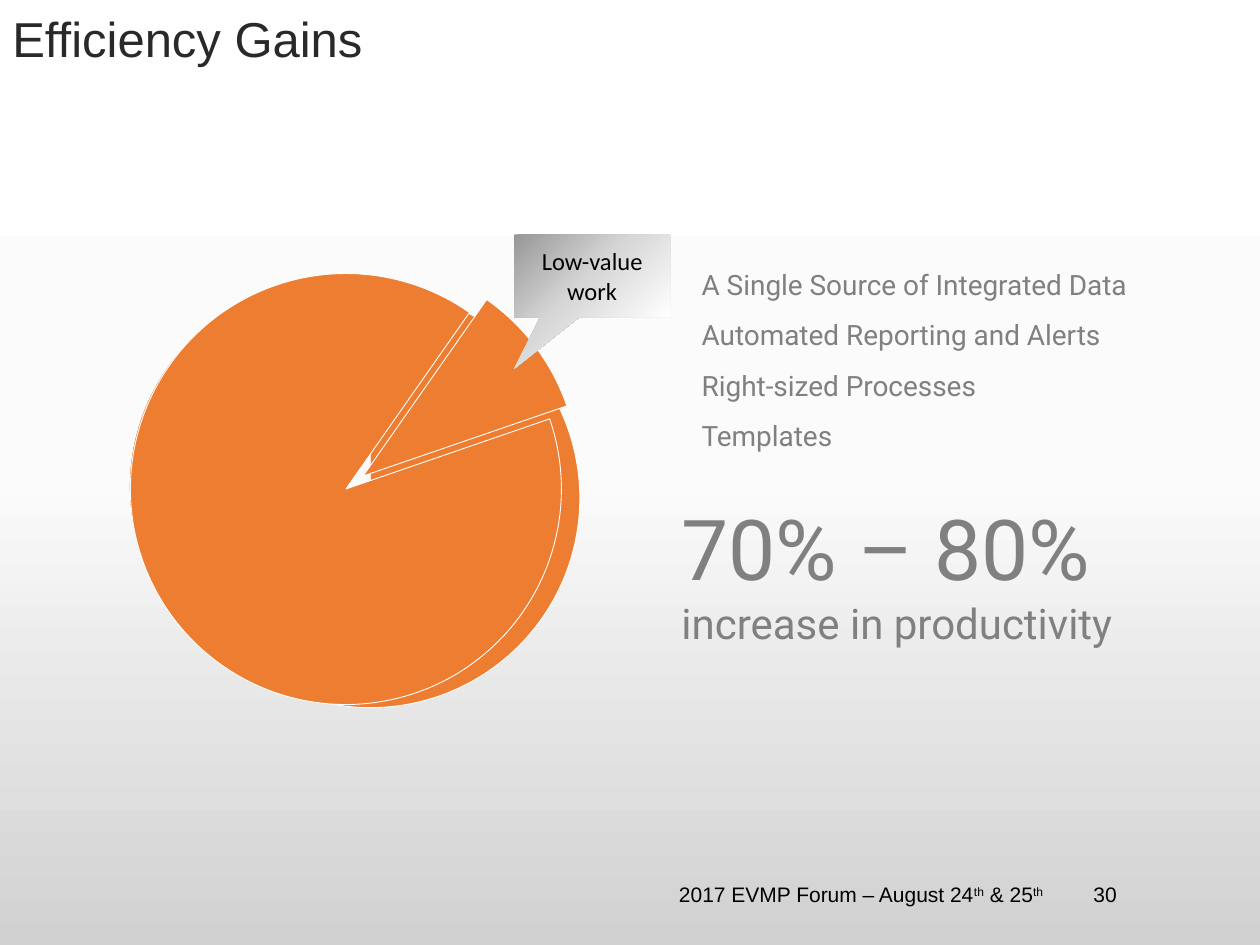
import copy
from dataclasses import dataclass

import pptx
import pptx.chart.data
import pptx.dml.color
import pptx.enum.chart
import pptx.enum.shapes
import pptx.enum.text
import pptx.oxml
import pptx.oxml.ns
import pptx.util
from pptx.util import Inches

qn = pptx.oxml.ns.qn


@dataclass(frozen=True)
class Theme:
    title: str = "292929"
    body: str = "808080"
    ink: str = "000000"
    slice: str = "ED7D31"
    edge: str = "FFFFFF"
    backdrop: tuple = ((0, "FFFFFF"), (0.5, "FBFBFB"), (1, "D1D1D1"))
    callout: tuple = ((0, "979797"), (0.5, "D7D7D7"), (1, "FFFFFF"))
    heading_font: str = "Arial"
    body_font: str = "Roboto"
    label_font: str = "Calibri"
    title_size: int = 28
    figure_size: int = 48
    caption_size: int = 24
    chart_size: int = 18
    list_size: int = 16
    label_size: int = 14
    footer_size: int = 12


THEME = Theme()


def rgb(code):
    return pptx.dml.color.RGBColor.from_string(code)


def style(font, name, size, color):
    font.name = name
    font.size = pptx.util.Pt(size)
    font.color.rgb = rgb(color)


def apply_gradient(fill, owner, stops, angle):
    """Fill with evenly listed stops; the angle runs clockwise."""
    fill.gradient()
    fill.gradient_angle = 360 - angle
    stop_list = next(owner.iter(qn("a:gsLst")))
    while len(stop_list) < len(stops):
        stop_list.append(copy.deepcopy(stop_list[0]))
    for stop, (position, color) in zip(fill.gradient_stops, stops):
        stop.position = position
        stop.color.rgb = rgb(color)


def add_text(page, box, lines, name, size, color):
    """Add a wrapped text box, one paragraph for each line."""
    frame = page.shapes.add_textbox(*map(Inches, box)).text_frame
    frame.word_wrap = True
    frame.text = "\n".join(lines)
    for para in frame.paragraphs:
        for span in para.runs:
            style(span.font, name, size, color)
    return frame


def add_title(page, box):
    frame = add_text(page, box, ["Efficiency Gains"], THEME.heading_font,
                     THEME.title_size, THEME.title)
    frame.paragraphs[0].line_spacing = 0.9


def add_pie(page, box, values, layout, start, explosion):
    data = pptx.chart.data.CategoryChartData()
    data.categories = ["1", "2"]
    data.add_series("Series 1", values)
    chart = page.shapes.add_chart(
        pptx.enum.chart.XL_CHART_TYPE.PIE_EXPLODED, *map(Inches, box), data).chart
    chart.has_legend = False
    chart.has_title = False
    style(chart.font, THEME.label_font, THEME.chart_size, THEME.ink)
    plot = chart.plots[0]
    plot.vary_by_categories = True
    plot.has_data_labels = False

    # Slices
    for index in range(len(values)):
        look = plot.series[0].points[index].format
        look.fill.solid()
        look.fill.fore_color.rgb = rgb(THEME.slice)
        look.line.color.rgb = rgb(THEME.edge)
        look.line.width = pptx.util.Pt(0.5)

    # Explosion, first angle and inner plot area
    root = chart.element
    next(root.iter(qn("c:explosion"))).set("val", str(explosion))
    pie = next(root.iter(qn("c:pieChart")))
    for old in pie.findall(qn("c:firstSliceAng")):
        pie.remove(old)
    angle = pptx.oxml.parse_xml(
        f'<c:firstSliceAng {pptx.oxml.ns.nsdecls("c")} val="{start}"/>')
    pie.append(angle)
    area = pie.getparent()
    for old in area.findall(qn("c:layout")):
        area.remove(old)
    places = "".join(f'<c:{tag} val="{value}"/>'
                     for tag, value in zip("xywh", layout))
    area.insert(0, pptx.oxml.parse_xml(
        f'<c:layout {pptx.oxml.ns.nsdecls("c")}><c:manualLayout>'
        '<c:layoutTarget val="inner"/><c:xMode val="edge"/><c:yMode val="edge"/>'
        f'{places}</c:manualLayout></c:layout>'))


def add_productivity(page, box):
    frame = add_text(page, box, ["70% – 80% "], THEME.body_font,
                     THEME.figure_size, THEME.body)
    span = frame.paragraphs[0].add_run()
    span.text = "increase in productivity"
    style(span.font, THEME.body_font, THEME.caption_size, THEME.body)


def add_drivers(page, box):
    drivers = ["A Single Source of Integrated Data", "Automated Reporting and Alerts",
               "Right-sized Processes", "Templates"]
    frame = add_text(page, box, drivers, THEME.body_font, THEME.list_size, THEME.body)
    for para in frame.paragraphs:
        para.line_spacing = 1.5


def add_callout(page, box):
    shape = page.shapes.add_shape(
        pptx.enum.shapes.MSO_SHAPE.RECTANGULAR_CALLOUT, *map(Inches, box))
    shape.adjustments[0] = -0.5
    shape.adjustments[1] = 1.12
    shape.shadow.inherit = False
    apply_gradient(shape.fill, shape.element, THEME.callout, 45)
    shape.line.fill.background()
    frame = shape.text_frame
    frame.word_wrap = True
    frame.vertical_anchor = pptx.enum.text.MSO_ANCHOR.MIDDLE
    frame.margin_left = frame.margin_right = Inches(0.16)
    frame.margin_top = frame.margin_bottom = Inches(0.16)
    frame.text = "Low-value work"
    para = frame.paragraphs[0]
    para.alignment = pptx.enum.text.PP_ALIGN.CENTER
    style(para.runs[0].font, THEME.label_font, THEME.label_size, THEME.ink)


def add_footer(page, box):
    left, top, width, height = box
    number_width = 0.72
    event_width = width - number_width
    look = (THEME.heading_font, THEME.footer_size, THEME.ink)
    frame = add_text(page, (left, top, event_width, height),
                     ["2017 EVMP Forum – August 24"], *look)
    for text, raised in (("th", True), (" & 25", False), ("th", True)):
        span = frame.paragraphs[0].add_run()
        span.text = text
        style(span.font, *look)
        if raised:
            span.font._element.set("baseline", "30000")
    add_text(page, (left + event_width, top, number_width, height), ["30"], *look)


def build_slide(deck):
    page = deck.slides.add_slide(deck.slide_layouts[6])
    apply_gradient(page.background.fill, page.element, THEME.backdrop, 90)
    add_title(page, (0, 0.07, 8.22, 0.64))
    # Two overlaid pies
    add_pie(page, (0.21, 1.86, 4.49, 4.02), (61, 39), (0.18, 0.04, 0.8, 0.94), 0, 8)
    add_pie(page, (0.12, 1.7, 4.49, 4.02), (10, 90), (0.2, 0.09, 0.8, 0.94), 35, 5)
    add_productivity(page, (5.31, 3.89, 4.09, 1.31))
    add_drivers(page, (5.47, 1.94, 4.09, 1.72))
    add_callout(page, (4.08, 1.86, 1.24, 0.66))
    add_footer(page, (5.29, 6.95, 4.01, 0.4))


def main():
    deck = pptx.Presentation()
    deck.slide_width = Inches(10)
    deck.slide_height = Inches(7.5)
    build_slide(deck)
    deck.save("out.pptx")


if __name__ == "__main__":
    main()
